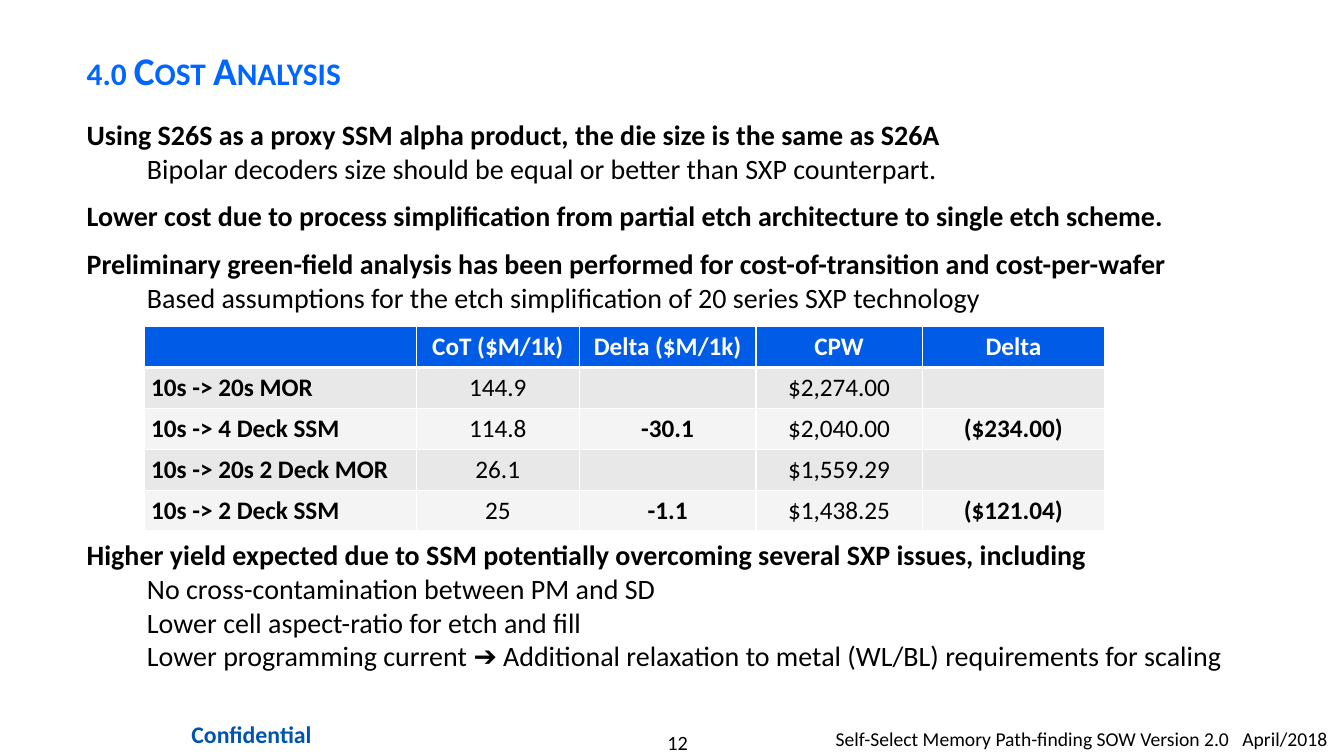
from lxml import etree
from pptx import Presentation
from pptx.dml.color import RGBColor
from pptx.enum import text
from pptx.oxml import ns
from pptx.util import Cm, Pt

BLACK = RGBColor(0x00, 0x00, 0x00)
WHITE = RGBColor(0xFF, 0xFF, 0xFF)
TITLE_BLUE = RGBColor(0x00, 0x66, 0xFF)
LABEL_BLUE = RGBColor(0x00, 0x54, 0xB0)
HEADER_BLUE = RGBColor(0x00, 0x5C, 0xE7)
DARK_BAND = RGBColor(0xE8, 0xE8, 0xE8)
LIGHT_BAND = RGBColor(0xF4, 0xF4, 0xF4)
LEFT = text.PP_ALIGN.LEFT
CENTER = text.PP_ALIGN.CENTER


def add_element(parent, tag, **attributes):
    element = etree.SubElement(parent, ns.qn(tag))
    for name, value in attributes.items():
        element.set(name, str(value))
    return element


def format_paragraph(paragraph, size, color, bold=False, alignment=LEFT):
    paragraph.alignment = alignment
    paragraph.font.name = "Calibri"
    paragraph.font.size = Pt(size)
    paragraph.font.bold = bold
    paragraph.font.color.rgb = color


presentation = Presentation()
presentation.slide_width = Cm(33.87)
presentation.slide_height = Cm(19.05)
slide = presentation.slides.add_slide(presentation.slide_layouts[1])

footers = [
    ("12", (14.12, 18.39, 5.92, 0.61), (0, 0), 14.5, BLACK, False, CENTER),
    ("Confidential", (3.94, 17.98, 4.8, 1.04), (0.3, 0.15), 17, LABEL_BLUE, True, CENTER),
    ("Self-Select Memory Path-finding SOW Version 2.0\tApril/2018",
     (21.06, 18.19, 12.81, 0.86), (0, 0.13), 14, BLACK, False, LEFT),
]
for wording, box, (side, edge), size, color, bold, alignment in footers:
    frame = slide.shapes.add_textbox(*map(Cm, box)).text_frame
    frame.word_wrap = True
    frame.margin_left = frame.margin_right = Cm(side)
    frame.margin_top = frame.margin_bottom = Cm(edge)
    paragraph = frame.paragraphs[0]
    paragraph.text = wording
    if "\t" in wording:
        tabs = add_element(paragraph._p.get_or_add_pPr(), "a:tabLst")
        add_element(tabs, "a:tab", pos=Cm(10.25), algn="l")
    format_paragraph(paragraph, size, color, bold, alignment)

title = slide.shapes.title
title.left, title.top, title.width, title.height = map(Cm, (1.93, 0.53, 28.09, 2.34))
title.text_frame.auto_size = text.MSO_AUTO_SIZE.NONE
title.text_frame.vertical_anchor = text.MSO_ANCHOR.MIDDLE
paragraph = title.text_frame.paragraphs[0]
paragraph.text = "4.0 Cost Analysis"
paragraph.line_spacing = 1.1
format_paragraph(paragraph, 28, TITLE_BLUE, True)
paragraph.runs[0]._r.get_or_add_rPr().set("cap", "small")

points = [
    (0, 0, "Using S26S as a proxy SSM alpha product, the die size is the same as S26A"),
    (1, 0, "Bipolar decoders size should be equal or better than SXP counterpart."),
    (0, 10, "Lower cost due to process simplification from partial etch architecture to single etch scheme."),
    (0, 10, "Preliminary green-field analysis has been performed for cost-of-transition and cost-per-wafer"),
    (1, 0, "Based assumptions for the etch simplification of 20 series SXP technology"),
    (0, 160, "Higher yield expected due to SSM potentially overcoming several SXP issues, including"),
    (1, 0, "No cross-contamination between PM and SD"),
    (1, 0, "Lower cell aspect-ratio for etch and fill"),
    (1, 0, "Lower programming current ➔ Additional relaxation to metal (WL/BL) requirements for scaling"),
]
indents = [(1.27, -1.27), (3.07, -1.55)]
body = slide.placeholders[1]
body.left, body.top, body.width, body.height = map(Cm, (1.93, 2.84, 31.39, 14.88))
frame = body.text_frame
frame.auto_size = text.MSO_AUTO_SIZE.NONE
for index, (level, gap, wording) in enumerate(points):
    paragraph = frame.add_paragraph() if index else frame.paragraphs[0]
    paragraph.text = wording
    paragraph.level = level
    paragraph.space_before = Pt(gap)
    properties = paragraph._p.get_or_add_pPr()
    margin, indent = indents[level]
    properties.set("marL", str(Cm(margin)))
    properties.set("indent", str(Cm(indent)))
    add_element(properties, "a:buNone")
    format_paragraph(paragraph, 20, BLACK, level == 0)

costs = [
    ("", "CoT ($M/1k)", "Delta ($M/1k)", "CPW", "Delta"),
    ("10s -> 20s MOR", "144.9", "", "$2,274.00", ""),
    ("10s -> 4 Deck SSM", "114.8", "-30.1", "$2,040.00", "($234.00)"),
    ("10s -> 20s 2 Deck MOR", "26.1", "", "$1,559.29", ""),
    ("10s -> 2 Deck SSM", "25", "-1.1", "$1,438.25", "($121.04)"),
]
widths = [6.86, 4.11, 4.45, 4.19, 4.6]
row_height = 1.03
table = slide.shapes.add_table(
    len(costs), len(widths), Cm(3.63), Cm(8.23), Cm(sum(widths)), Cm(row_height * len(costs))
).table
for column, width in zip(table.columns, widths):
    column.width = Cm(width)
for row_index, values in enumerate(costs):
    table.rows[row_index].height = Cm(row_height)
    header = row_index == 0
    band = HEADER_BLUE if header else (LIGHT_BAND, DARK_BAND)[row_index % 2]
    for column_index, value in enumerate(values):
        cell = table.cell(row_index, column_index)
        cell.margin_left = cell.margin_right = Cm(0.18)
        cell.margin_top = cell.margin_bottom = 0
        cell.vertical_anchor = text.MSO_ANCHOR.MIDDLE
        for side in "LRTB":
            thick = (header and side == "B") or (row_index == 1 and side == "T")
            line = add_element(cell._tc.get_or_add_tcPr(), f"a:ln{side}", w=Pt(3 if thick else 1))
            add_element(add_element(line, "a:solidFill"), "a:srgbClr", val=WHITE)
        cell.fill.solid()
        cell.fill.fore_color.rgb = band
        if value:
            paragraph = cell.text_frame.paragraphs[0]
            paragraph.text = value
            format_paragraph(
                paragraph, 18, WHITE if header else BLACK,
                header or column_index in (0, 2, 4), CENTER if column_index else LEFT,
            )

presentation.save("out.pptx")
